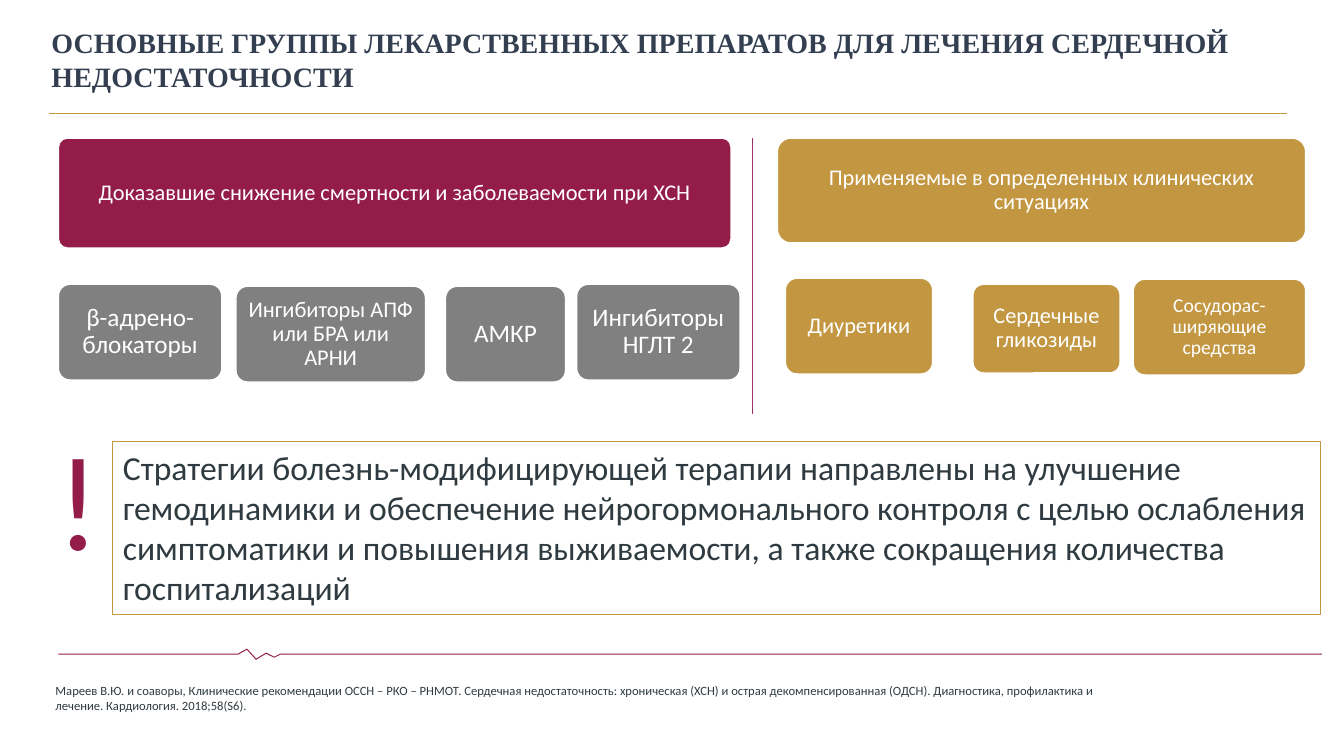
from dataclasses import dataclass
from lxml.etree import SubElement as Sub
from pptx import Presentation
from pptx.dml.color import RGBColor as Rgb
from pptx.enum.shapes import MSO_CONNECTOR as Link, MSO_SHAPE as Kind
from pptx.enum.text import MSO_ANCHOR as Anchor, MSO_AUTO_SIZE as Fit, PP_ALIGN as Align
from pptx.oxml.ns import qn
from pptx.util import Inches, Pt


@dataclass(frozen=True)
class Theme:
    wine: str = "931D48"
    pulse: str = "921D47"
    plum: str = "993366"
    gold: str = "C39741"
    gray: str = "808080"
    navy: str = "333F50"
    ink: str = "2F3B41"
    white: str = "FFFFFF"
    sans: str = "Calibri"
    serif: str = "Times New Roman"
    note: int = 9
    small: int = 14
    body: int = 16
    large: int = 18
    title: int = 20
    claim: int = 24
    mark: int = 96


@dataclass(frozen=True)
class Box:
    x: float
    y: float
    w: float
    h: float

    def share(self, x, y, w, h):
        return Box(self.x + self.w * x / 100, self.y + self.h * y / 100,
                   self.w * w / 100, self.h * h / 100)

    def emu(self):
        return [Inches(v) for v in (self.x, self.y, self.w, self.h)]


T = Theme()
PAGE = Box(0, 0, 13.33, 7.5)


def write(shape, text, size, color, font=T.sans, bold=False, align=Align.LEFT,
          anchor=Anchor.TOP, pads=(0, 0.02, 0, 0), lead=1):
    frame = shape.text_frame
    frame.word_wrap = True
    frame.auto_size = Fit.NONE
    frame.vertical_anchor = anchor
    (frame.margin_left, frame.margin_top,
     frame.margin_right, frame.margin_bottom) = [Inches(p) for p in pads]
    para = frame.paragraphs[0]
    para.alignment = align
    para.line_spacing = lead
    run = para.add_run()
    run.text = text
    run.font.name = font
    run.font.size = Pt(size)
    run.font.bold = bold
    run.font.color.rgb = Rgb.from_string(color)


def stroke(shape, color, width):
    shape.line.color.rgb = Rgb.from_string(color)
    shape.line.width = Pt(width)


def rule(slide, box, color, width):
    x, y, w, h = box.emu()
    line = slide.shapes.add_connector(Link.STRAIGHT, x, y, x + w, y + h)
    stroke(line, color, width)
    Sub(line._element.spPr, qn("a:effectLst"))


def head(slide, box, text):
    title = slide.shapes.title
    title.left, title.top, title.width, title.height = box.share(0, 0, 100, 76.67).emu()
    write(title, text, T.title, T.navy, T.serif, True, anchor=Anchor.MIDDLE,
          pads=(0.02, 0.02, 0, 0))
    rule(slide, box.share(0, 100, 98.4, 0), T.gold, 0.7)


def card(slide, box, text, size, fill, pad):
    shape = slide.shapes.add_shape(Kind.ROUNDED_RECTANGLE, *box.emu())
    shape.shadow.inherit = False
    shape.adjustments[0] = pad
    shape.fill.solid()
    shape.fill.fore_color.rgb = Rgb.from_string(fill)
    stroke(shape, T.white, 1)
    write(shape, text, size, T.white, align=Align.CENTER, anchor=Anchor.MIDDLE,
          pads=[0.07] * 4, lead=0.9)


def panel(slide, box, top, fill, cards, tint):
    text, w, h, curve = top
    card(slide, box.share(0, 0, w, h), text, T.body, fill, curve)
    for text, size, *place in cards:
        card(slide, box.share(*place), text, size, tint, 0.12)


def claim(slide, box, text):
    mark = slide.shapes.add_textbox(*box.share(0, 0, 3.19, 81.91).emu())
    write(mark, "!", T.mark, T.wine, align=Align.CENTER)
    frame = slide.shapes.add_shape(Kind.RECTANGLE, *box.share(4.47, 13.57, 95.53, 86.43).emu())
    frame.shadow.inherit = False
    frame.fill.background()
    stroke(frame, T.gold, 0.75)
    write(frame, text, T.claim, T.ink, pads=(0.1, 0.05, 0.1, 0.05))


def pulse(slide, box):
    beats = [(0, 50), (14.21, 50), (14.92, 0), (15.64, 100),
             (16.44, 40), (17.08, 80), (17.56, 50), (100, 50)]
    first, *rest = [tuple(box.share(x, y, 0, 0).emu()[:2]) for x, y in beats]
    pen = slide.shapes.build_freeform(*first)
    pen.add_line_segments(rest, close=False)
    wave = pen.convert_to_shape()
    wave.shadow.inherit = False
    wave.fill.background()
    stroke(wave, T.pulse, 0.7)


def source(slide, box, text):
    write(slide.shapes.add_textbox(*box.emu()), text, T.note, T.ink)


def main():
    deck = Presentation()
    deck.slide_width, deck.slide_height = Inches(PAGE.w), Inches(PAGE.h)
    slide = deck.slides.add_slide(deck.slide_layouts[5])
    head(slide, PAGE.share(3.68, 3.07, 93.55, 12),
         "ОСНОВНЫЕ ГРУППЫ ЛЕКАРСТВЕННЫХ ПРЕПАРАТОВ ДЛЯ ЛЕЧЕНИЯ СЕРДЕЧНОЙ НЕДОСТАТОЧНОСТИ")
    panel(slide, PAGE.share(4.35, 18.27, 50.71, 32.27),
          ("Доказавшие снижение смертности и заболеваемости при ХСН", 98.67, 45.04, 0.08),
          T.wine,
          [("β-адрено-блокаторы", T.large, 0, 59.92, 23.96, 39.26),
           ("Ингибиторы АПФ или БРА или АРНИ", T.body, 26.04, 60.74, 27.81, 39.26),
           ("АМКР", T.large, 56.8, 60.74, 17.6, 39.26),
           ("Ингибиторы НГЛТ 2", T.large, 76.04, 59.92, 23.96, 39.26)], T.gray)
    panel(slide, PAGE.share(57.84, 18.27, 39.31, 31.33),
          ("Применяемые в определенных клинических ситуациях", 100, 44.26, 0.13),
          T.gold,
          [("Диуретики", T.body, 1.53, 59.15, 27.86, 40.43),
           ("Сердечные гликозиды", T.body, 37.02, 61.7, 27.86, 37.45),
           ("Сосудорас-ширяющие средства", T.small, 67.37, 59.57, 32.63, 40.43)], T.gold)
    rule(slide, PAGE.share(55.96, 18.27, 0, 36.53), T.plum, 0.5)
    claim(slide, PAGE.share(4.2, 54.8, 94.07, 26.53),
          "Стратегии болезнь-модифицирующей терапии направлены на улучшение "
          "гемодинамики и обеспечение нейрогормонального контроля с целью ослабления "
          "симптоматики и повышения выживаемости, а также сокращения количества госпитализаций")
    pulse(slide, PAGE.share(4.35, 85.87, 94, 1.33))
    source(slide, PAGE.share(4.13, 90, 79.22, 4.4),
           "Мареев В.Ю. и соаворы, Клинические рекомендации ОССН – РКО – РНМОТ. "
           "Сердечная недостаточность: хроническая (ХСН) и острая декомпенсированная (ОДСН). "
           "Диагностика, профилактика и лечение. Кардиология. 2018;58(S6).")
    deck.save("out.pptx")


if __name__ == "__main__":
    main()
